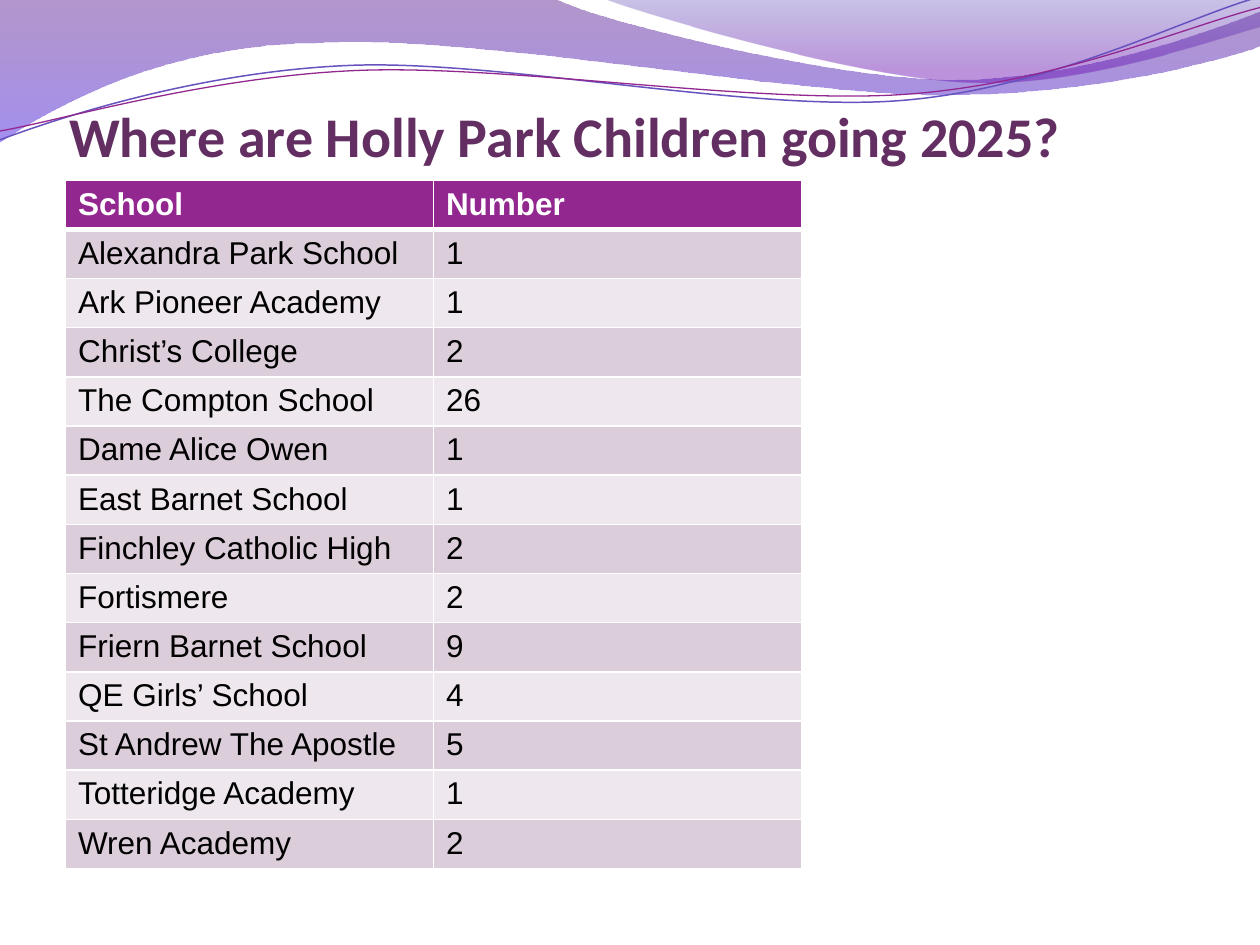
"""Build a slide listing the secondary schools that pupils move to in 2025."""
import dataclasses

import lxml.etree
import pptx
import pptx.dml.color
import pptx.enum.text
import pptx.oxml
import pptx.oxml.ns
import pptx.util

Inches = pptx.util.Inches
Pt = pptx.util.Pt
RGB = pptx.dml.color.RGBColor.from_string
qn = pptx.oxml.ns.qn


@dataclasses.dataclass(frozen=True)
class Theme:
    title: str = "632E62"
    header: str = "92278F"
    bands: tuple = ("DCCDDB", "EEE8EE")
    text: str = "000000"
    white: str = "FFFFFF"
    title_font: str = "Calibri"
    table_font: str = "Arial"
    title_size: int = 32
    table_size: int = 18


def add_curve(shapes, start, segments, closed):
    """Draw straight (one point) and cubic (three point) segments from start."""
    builder = shapes.build_freeform(Inches(start[0]), Inches(start[1]))
    points = [(Inches(x), Inches(y)) for segment in segments for x, y in segment]
    builder.add_line_segments(points, close=closed)
    shape = builder.convert_to_shape()
    shape.shadow.inherit = False
    lines = iter(list(shape._element.iter(qn("a:lnTo"))))
    for segment in segments:
        first = next(lines)
        for _ in segment[1:]:
            line = next(lines)
            first.append(line[0])
            line.getparent().remove(line)
        if len(segment) == 3:
            first.tag = qn("a:cubicBezTo")
    return shape


def add_border(cell, side, width):
    """Add a white border to one side of a cell."""
    properties = cell._tc.get_or_add_tcPr()
    line = lxml.etree.SubElement(properties, qn(f"a:ln{side}"), w=str(Pt(width)))
    fill = lxml.etree.SubElement(line, qn("a:solidFill"))
    lxml.etree.SubElement(fill, qn("a:srgbClr"), val=theme.white)


theme = Theme()
presentation = pptx.Presentation()
presentation.slide_width = Inches(10)
presentation.slide_height = Inches(7.5)
slide = presentation.slides.add_slide(presentation.slide_layouts[6])

waves = [
    ((0, -0.01),
     [[(4.4, -0.01)],
      [(4.76, 0.17), (6.64, 0.63), (7.58, 0.63)],
      [(8.53, 0.63), (9.58, 0.26), (10, 0.09)],
      [(10.01, 0.36)],
      [(9.83, 0.44), (8.7, 0.76), (7.46, 0.75)],
      [(6.22, 0.75), (3.82, 0.28), (2.57, 0.34)],
      [(1.29, 0.35), (0.46, 0.83), (-0.01, 1.13)]],
     [(0, "58188D", 45), (1, "5735E4", 55)]),
    ((4.79, -0.01),
     [[(5.09, 0.11), (6.82, 0.62), (7.69, 0.65)],
      [(8.56, 0.69), (9.61, 0.32), (10, 0.21)],
      [(10, 0)]],
     [(0, "4E37AE", 30), (0.8, "6A11B3", 45)]),
]
for start, segments, stops in waves:
    wave = add_curve(slide.shapes, start, segments, True)
    wave.line.fill.background()
    wave.fill.gradient()
    wave.fill.gradient_angle = 270
    for stop, (position, color, opacity) in zip(wave.fill.gradient_stops, stops):
        stop.position = position
        stop.color.rgb = RGB(color)
        color_element = stop._gs.find(qn("a:srgbClr"))
        lxml.etree.SubElement(color_element, qn("a:alpha"), val=str(opacity * 1000))

strands = [
    ((0, 1.11),
     [[(0.48, 0.93), (1.58, 0.57), (2.77, 0.52)],
      [(3.95, 0.47), (5.93, 0.89), (7.13, 0.8)],
      [(8.33, 0.71), (9.38, 0.15), (9.98, -0.02)]],
     "6752BF", 0.85),
    ((0, 1.04),
     [[(0.47, 0.96), (1.64, 0.61), (2.83, 0.56)],
      [(4.03, 0.51), (5.97, 0.83), (7.17, 0.75)],
      [(8.36, 0.67), (9.41, 0.21), (10, 0.06)]],
     "92278F", 0.75),
]
for start, segments, color, width in strands:
    strand = add_curve(slide.shapes, start, segments, False)
    strand.fill.background()
    strand.line.color.rgb = RGB(color)
    strand.line.width = Pt(width)

title = slide.shapes.add_textbox(Inches(0.45), Inches(0.76), Inches(9), Inches(0.86))
title.text_frame.word_wrap = True
title.text_frame.vertical_anchor = pptx.enum.text.MSO_ANCHOR.TOP
title.text_frame.text = "Where are Holly Park Children going 2025?"
title_font = title.text_frame.paragraphs[0].runs[0].font
title_font.name = theme.title_font
title_font.size = Pt(theme.title_size)
title_font.bold = True
title_font.color.rgb = RGB(theme.title)

rows = [
    ("School", "Number"),
    ("Alexandra Park School", "1"),
    ("Ark Pioneer Academy", "1"),
    ("Christ’s College", "2"),
    ("The Compton School", "26"),
    ("Dame Alice Owen", "1"),
    ("East Barnet School", "1"),
    ("Finchley Catholic High", "2"),
    ("Fortismere", "2"),
    ("Friern Barnet School", "9"),
    ("QE Girls’ School", "4"),
    ("St Andrew The Apostle", "5"),
    ("Totteridge Academy", "1"),
    ("Wren Academy", "2"),
]
row_height = 0.38
table = slide.shapes.add_table(
    len(rows), 2, Inches(0.52), Inches(1.43), Inches(5.84), Inches(row_height * len(rows))).table
for row_index, values in enumerate(rows):
    table.rows[row_index].height = Inches(row_height)
    is_header = row_index == 0
    for column_index, value in enumerate(values):
        cell = table.cell(row_index, column_index)
        cell.margin_left = cell.margin_right = Inches(0.1)
        cell.margin_top = Inches(0.05)
        cell.margin_bottom = Inches(0.04)
        for side in "LRTB":
            thick = (is_header and side == "B") or (row_index == 1 and side == "T")
            add_border(cell, side, 3 if thick else 1)
        cell.fill.solid()
        cell.fill.fore_color.rgb = RGB(theme.header if is_header else theme.bands[(row_index - 1) % 2])
        cell.text_frame.text = value
        font = cell.text_frame.paragraphs[0].runs[0].font
        font.name = theme.table_font
        font.size = Pt(theme.table_size)
        font.bold = is_header
        font.color.rgb = RGB(theme.white if is_header else theme.text)

presentation.save("out.pptx")
